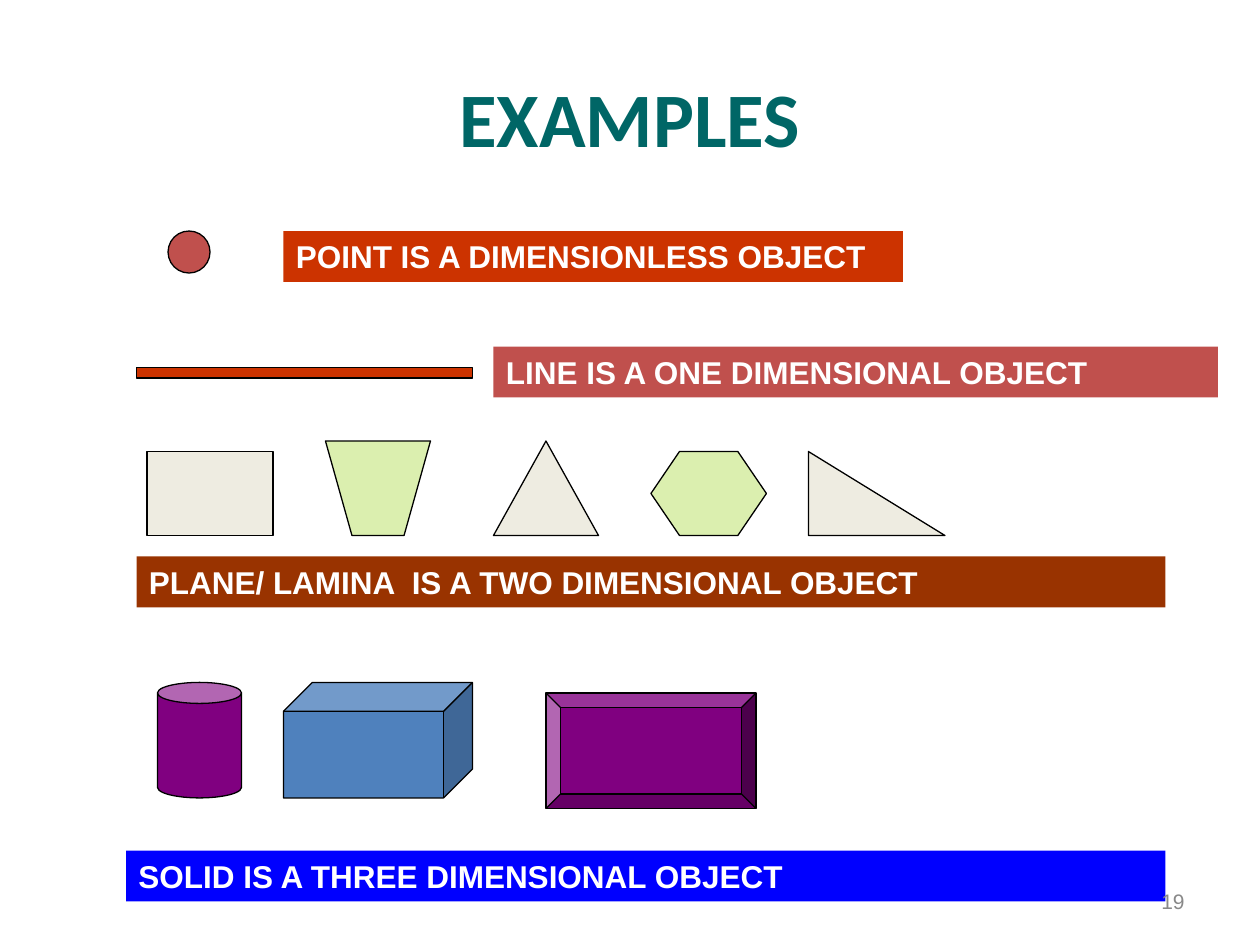
from pptx import Presentation
from pptx.dml.color import RGBColor
from pptx.enum.shapes import MSO_SHAPE as Shape
from pptx.enum.text import MSO_ANCHOR as Anchor, PP_ALIGN as Align
from pptx.util import Inches, Pt

TITLE_ONLY = 5
BLACK, WHITE, GREY, TEAL = "000000", "FFFFFF", "898989", "006666"
RED, ROSE, BROWN, BLUE = "CC3300", "C0504D", "993300", "0000FF"
CREAM, LIME, PURPLE, STEEL = "EEECE1", "DBEFAF", "800080", "4F81BD"


def color(code):
    return RGBColor.from_string(code)


def write(frame, text, font="Arial", size=18, ink=WHITE, bold=True,
          align=Align.LEFT, anchor=Anchor.TOP):
    frame.word_wrap = True
    frame.vertical_anchor = anchor
    frame.margin_left = frame.margin_right = Inches(0.1)
    frame.margin_top = frame.margin_bottom = Inches(0.05)
    para = frame.paragraphs[0]
    para.alignment = align
    span = para.add_run()
    span.text = text
    span.font.name, span.font.size, span.font.bold = font, Pt(size), bold
    span.font.color.rgb = color(ink)


class Page:
    """A slide measured on a grid of 12 cells to the inch."""
    cell = Inches(1) / 12
    banner_height = 4.85

    def __init__(self, deck):
        self.slide = deck.slides.add_slide(deck.slide_layouts[TITLE_ONLY])

    def place(self, *cells):
        return [round(length * self.cell) for length in cells]

    def title(self, text, *cells):
        box = self.slide.shapes.title
        box.left, box.top, box.width, box.height = self.place(*cells)
        write(box.text_frame, text, font="Calibri", size=44, ink=TEAL,
              align=Align.CENTER, anchor=Anchor.MIDDLE)

    def text(self, text, *cells, **style):
        box = self.slide.shapes.add_textbox(*self.place(*cells))
        write(box.text_frame, text, **style)
        return box

    def banner(self, text, fill, left, top, width):
        box = self.text(text, left, top, width, self.banner_height)
        box.fill.solid()
        box.fill.fore_color.rgb = color(fill)

    def figure(self, kind, fill, *cells, adjust=None, turn=0):
        shape = self.slide.shapes.add_shape(kind, *self.place(*cells))
        shape.shadow.inherit = False
        shape.fill.solid()
        shape.fill.fore_color.rgb = color(fill)
        shape.line.color.rgb = color(BLACK)
        shape.line.width = Pt(0.75)
        shape.rotation = turn
        if adjust is not None:
            shape.adjustments[0] = adjust


def main():
    deck = Presentation()
    deck.slide_width, deck.slide_height = Inches(10), Inches(7.5)
    page = Page(deck)
    page.title("EXAMPLES", 6, 3.6, 108, 15)

    page.figure(Shape.OVAL, ROSE, 16, 22, 4, 4)
    page.banner("POINT IS A DIMENSIONLESS OBJECT", RED, 27, 22, 59)

    page.figure(Shape.RECTANGLE, RED, 13, 35, 32, 1)
    page.banner("LINE IS A ONE DIMENSIONAL OBJECT", ROSE, 47, 33, 69)

    page.figure(Shape.RECTANGLE, CREAM, 14, 43, 12, 8)
    page.figure(Shape.TRAPEZOID, LIME, 31, 42, 10, 9, adjust=0.28, turn=180)
    page.figure(Shape.ISOSCELES_TRIANGLE, CREAM, 47, 42, 10, 9)
    page.figure(Shape.HEXAGON, LIME, 62, 43, 11, 8, adjust=0.34)
    page.figure(Shape.RIGHT_TRIANGLE, CREAM, 77, 43, 13, 8)
    page.banner("PLANE/ LAMINA  IS A TWO DIMENSIONAL OBJECT", BROWN, 13, 53, 98)

    page.figure(Shape.CAN, PURPLE, 15, 65, 8, 11, adjust=0.25)
    page.figure(Shape.CUBE, STEEL, 27, 65, 18, 11, adjust=0.25)
    page.figure(Shape.BEVEL, PURPLE, 52, 66, 20, 11, adjust=0.125)
    page.banner("SOLID IS A THREE DIMENSIONAL OBJECT", BLUE, 12, 81, 99)

    page.text("19", 86, 83.4, 28, 4.8, size=12, ink=GREY, bold=False,
              align=Align.RIGHT, anchor=Anchor.MIDDLE)
    deck.save("out.pptx")


if __name__ == "__main__":
    main()
